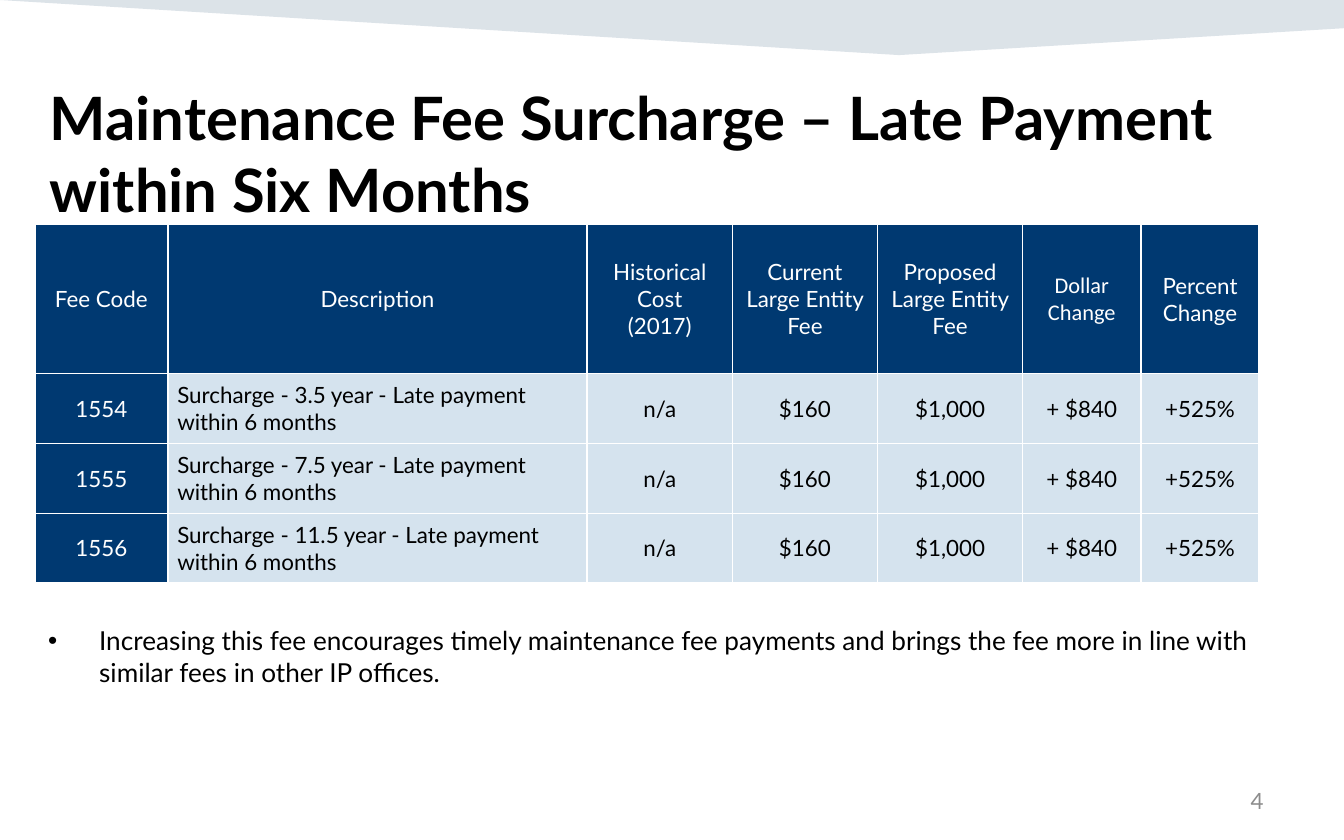
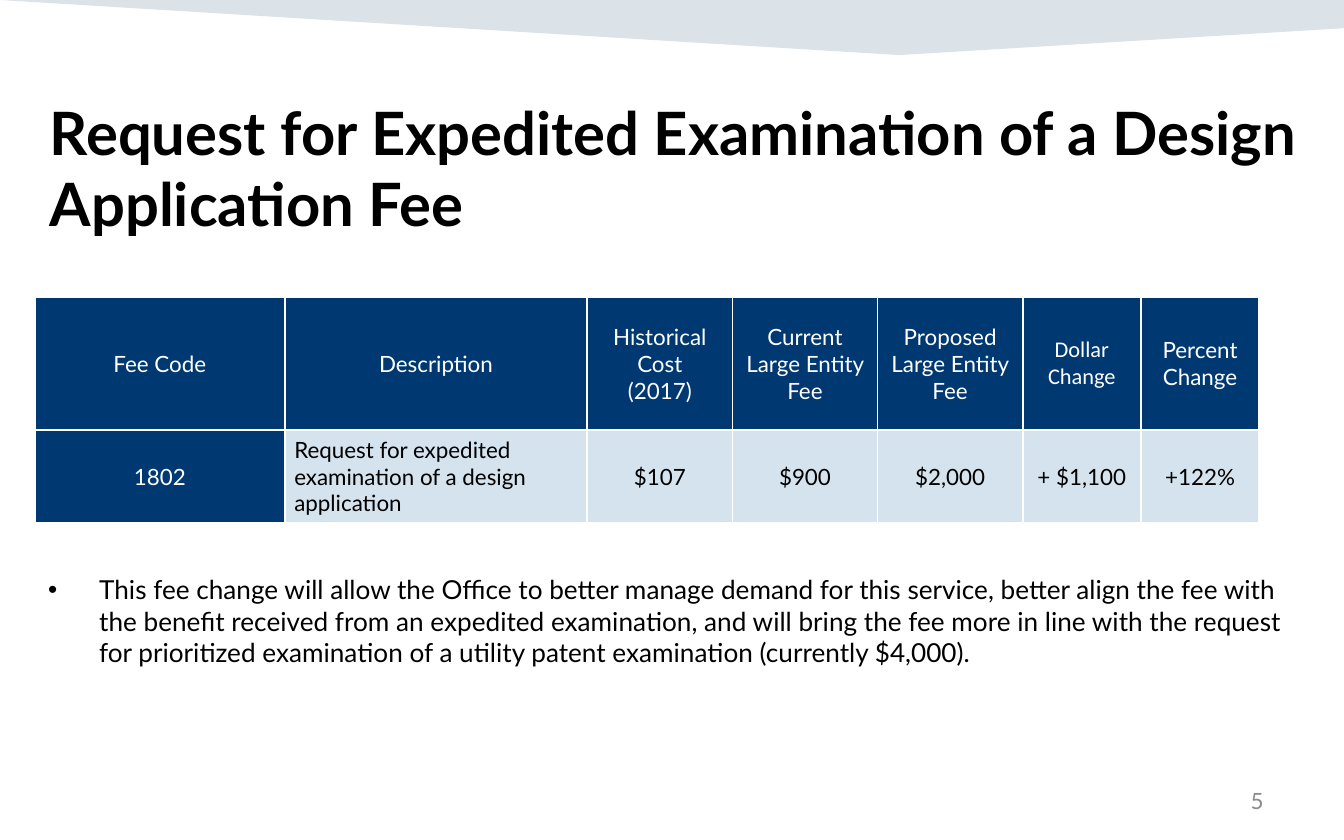
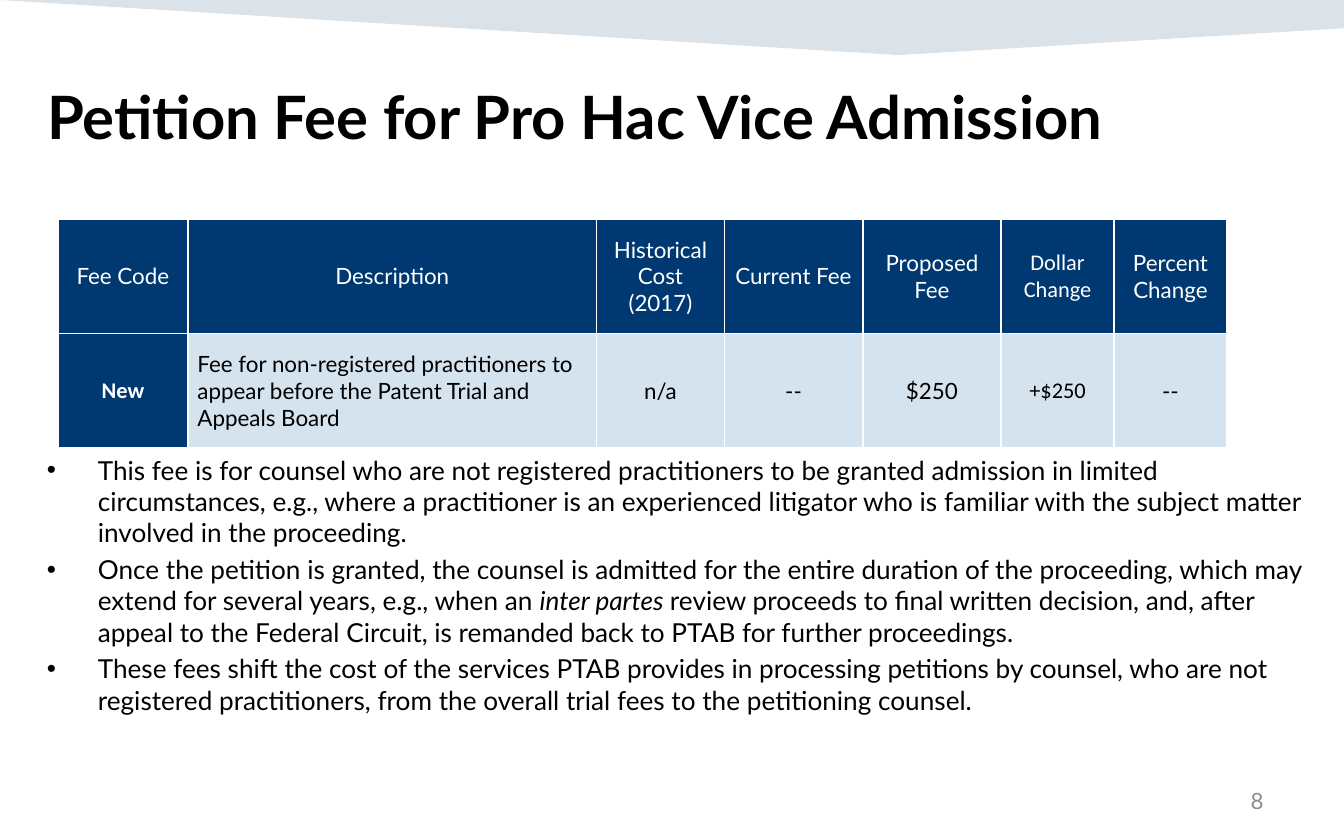
"""Builds three slides on proposed patent fee changes."""
from dataclasses import dataclass

from lxml import etree
from pptx import Presentation
from pptx.dml.color import RGBColor
from pptx.enum.text import MSO_ANCHOR, MSO_AUTO_SIZE, PP_ALIGN
from pptx.oxml.ns import qn
from pptx.util import Inches, Pt

TOP, MIDDLE = MSO_ANCHOR.TOP, MSO_ANCHOR.MIDDLE
LEFT, CENTER, RIGHT = PP_ALIGN.LEFT, PP_ALIGN.CENTER, PP_ALIGN.RIGHT
NO_FIT = MSO_AUTO_SIZE.NONE
TITLE_ONLY = 5


@dataclass(frozen=True)
class Theme:
    """Colours, fonts and type sizes of the deck."""
    navy: str = "003971"
    pale: str = "D5E3EE"
    band: str = "164469"
    white: str = "FFFFFF"
    black: str = "000000"
    grey: str = "8C8C8C"
    font: str = "Lato"
    accent_font: str = "Calibri"
    title: int = 32
    body: int = 14
    small: int = 12


THEME = Theme()
BAND_POINTS = [(0, 0), (10, 0), (10, 0.21), (6.69, 0.41)]
PAGE_NUMBER_BOX = (7.17, 5.79, 2.33, 0.33)
ACCENT_CELLS = ("Dollar Change", "New", "+$250")
BOLD_CELLS = ("New",)


def header(current, proposed):
    """Return the header row with the given fee column names."""
    return ["Fee Code", "Description", "Historical Cost\n(2017)", current, proposed,
            "Dollar Change", "Percent Change"]


LARGE_ENTITY = header("Current Large Entity Fee", "Proposed Large Entity Fee")

PAGES = [
    {
        "number": "4",
        "title": "Maintenance Fee Surcharge – Late Payment within Six Months",
        "title_box": (0.27, 0.55, 9.56, 1.37),
        "table_at": (0.26, 1.67),
        "columns": [0.99, 3.12, 1.08, 1.08, 1.08, 0.88, 0.88],
        "heights": [1.11, 0.52, 0.52, 0.52],
        "rows": [LARGE_ENTITY] + [
            [code, f"Surcharge - {year} year - Late payment within 6 months",
             "n/a", "$160", "$1,000", "+ $840", "+525%"]
            for code, year in (("1554", "3.5"), ("1555", "7.5"), ("1556", "11.5"))
        ],
        "bullets_box": (0.26, 4.6, 9.57, 0.71),
        "bullets": [
            "Increasing this fee encourages timely maintenance fee payments and brings "
            "the fee more in line with similar fees in other IP offices.",
        ],
    },
    {
        "number": "5",
        "title": "Request for Expedited Examination of a Design Application Fee",
        "title_box": (0.27, 0.66, 9.56, 1.31),
        "table_at": (0.26, 2.21),
        "columns": [1.86, 2.25, 1.08, 1.08, 1.08, 0.88, 0.88],
        "heights": [0.99, 0.69],
        "rows": [
            LARGE_ENTITY,
            ["1802", "Request for expedited examination of a design application",
             "$107", "$900", "$2,000", "+ $1,100", "+122%"],
        ],
        "bullets_box": (0.26, 4.22, 9.57, 0.95),
        "bullets": [
            "This fee change will allow the Office to better manage demand for this "
            "service, better align the fee with the benefit received from an expedited "
            "examination, and will bring the fee more in line with the request for "
            "prioritized examination of a utility patent examination (currently $4,000).",
        ],
    },
    {
        "number": "8",
        "title": "Petition Fee for Pro Hac Vice Admission",
        "title_box": (0.25, 0.54, 9.75, 0.97),
        "table_at": (0.43, 1.63),
        "columns": [0.97, 3.04, 0.95, 1.03, 1.03, 0.84, 0.84],
        "heights": [0.85, 0.85],
        "rows": [
            header("Current Fee", "Proposed Fee"),
            ["New", "Fee for non-registered practitioners to appear before the Patent "
             "Trial and Appeals Board", "n/a", "--", "$250", "+$250", "--"],
        ],
        "bullets_box": (0.25, 3.33, 9.57, 2.16),
        "bullets": [
            "This fee is for counsel who are not registered practitioners to be granted "
            "admission in limited circumstances, e.g., where a practitioner is an "
            "experienced litigator who is familiar with the subject matter involved in "
            "the proceeding.",
            "Once the petition is granted, the counsel is admitted for the entire "
            "duration of the proceeding, which may extend for several years, e.g., when "
            "an *inter partes *review proceeds to final written decision, and, after "
            "appeal to the Federal Circuit, is remanded back to PTAB for further "
            "proceedings.",
            "These fees shift the cost of the services PTAB provides in processing "
            "petitions by counsel, who are not registered practitioners, from the "
            "overall trial fees to the petitioning counsel.",
        ],
    },
]


def inches(values):
    """Convert plain numbers to lengths."""
    return [Inches(value) for value in values]


def style(span, size, color, bold=False, font=THEME.font):
    """Format one run."""
    span.font.name = font
    span.font.size = Pt(size)
    span.font.bold = bold
    span.font.color.rgb = RGBColor.from_string(color)


def add_band(deck, page):
    """Draw the translucent top band and move it to the slide master."""
    start, *others = [inches(point) for point in BAND_POINTS]
    builder = page.shapes.build_freeform(*start)
    builder.add_line_segments(others, close=True)
    band = builder.convert_to_shape()
    band.shadow.inherit = False
    band.line.fill.background()
    band.fill.solid()
    band.fill.fore_color.rgb = RGBColor.from_string(THEME.band)
    color = band.element.spPr.find(qn("a:solidFill"))[0]
    etree.SubElement(color, qn("a:alpha"), val="15000")
    deck.slide_master.shapes.element.insert(2, band.element)


def add_title(page, text, place):
    """Place and format the title placeholder."""
    title = page.shapes.title
    title.left, title.top, title.width, title.height = inches(place)
    frame = title.text_frame
    frame.text = text
    frame.vertical_anchor = TOP
    frame.auto_size = NO_FIT
    para = frame.paragraphs[0]
    para.alignment = LEFT
    style(para.runs[0], THEME.title, THEME.black, bold=True)


def add_text_frame(page, place, anchor):
    """Add a wrapping text box and return its frame."""
    frame = page.shapes.add_textbox(*inches(place)).text_frame
    frame.word_wrap = True
    frame.vertical_anchor = anchor
    return frame


def add_page_number(page, number):
    """Add the page number at the lower right."""
    frame = add_text_frame(page, PAGE_NUMBER_BOX, MIDDLE)
    frame.text = number
    para = frame.paragraphs[0]
    para.alignment = RIGHT
    style(para.runs[0], THEME.small, THEME.grey)


def add_bullets(page, bullets, place):
    """Add bulleted paragraphs, with text between asterisks in italics."""
    frame = add_text_frame(page, place, TOP)
    for index, bullet in enumerate(bullets):
        para = frame.add_paragraph() if index else frame.paragraphs[0]
        properties = para._p.get_or_add_pPr()
        properties.set("marL", str(Inches(0.38)))
        properties.set("indent", str(-Inches(0.38)))
        etree.SubElement(properties, qn("a:buFont"), typeface="Arial")
        etree.SubElement(properties, qn("a:buChar"), char="•")
        if index:
            para.space_before = Pt(0.2 * THEME.body)
        for part, text in enumerate(bullet.split("*")):
            span = para.add_run()
            span.text = text
            style(span, THEME.body, THEME.black)
            span.font.italic = part % 2 == 1


def add_borders(cell):
    """Give a cell white one-point borders."""
    properties = cell._tc.get_or_add_tcPr()
    for side in ("L", "R", "T", "B"):
        line = etree.SubElement(properties, qn(f"a:ln{side}"), w=str(Pt(1)))
        fill = etree.SubElement(line, qn("a:solidFill"))
        etree.SubElement(fill, qn("a:srgbClr"), val=THEME.white)


def fill_cell(cell, text, dark, alignment):
    """Write and format one table cell."""
    add_borders(cell)
    cell.fill.solid()
    cell.fill.fore_color.rgb = RGBColor.from_string(THEME.navy if dark else THEME.pale)
    cell.margin_left = cell.margin_right = Inches(0.07)
    cell.margin_top = cell.margin_bottom = 0
    cell.vertical_anchor = MIDDLE
    cell.text_frame.text = text
    font = THEME.accent_font if text in ACCENT_CELLS else THEME.font
    for para in cell.text_frame.paragraphs:
        para.alignment = alignment
        style(para.runs[0], THEME.small, THEME.white if dark else THEME.black,
              text in BOLD_CELLS, font)


def add_fee_table(page, rows, place, columns, heights):
    """Add a fee table with a dark header row and first column."""
    size = (sum(columns), sum(heights))
    table = page.shapes.add_table(len(rows), len(columns), *inches(place + size)).table
    table.horz_banding = False
    for column, width in zip(table.columns, columns):
        column.width = Inches(width)
    for row, height in zip(table.rows, heights):
        row.height = Inches(height)
    for r, row in enumerate(rows):
        for c, text in enumerate(row):
            alignment = LEFT if r and c == 1 else CENTER
            fill_cell(table.cell(r, c), text, r == 0 or c == 0, alignment)


def main():
    """Build and save the deck."""
    deck = Presentation()
    deck.slide_width, deck.slide_height = Inches(10), Inches(6.25)
    for index, content in enumerate(PAGES):
        page = deck.slides.add_slide(deck.slide_layouts[TITLE_ONLY])
        if index == 0:
            add_band(deck, page)
        add_title(page, content["title"], content["title_box"])
        add_page_number(page, content["number"])
        add_bullets(page, content["bullets"], content["bullets_box"])
        add_fee_table(page, content["rows"], content["table_at"],
                      content["columns"], content["heights"])
    deck.save("out.pptx")


if __name__ == "__main__":
    main()
